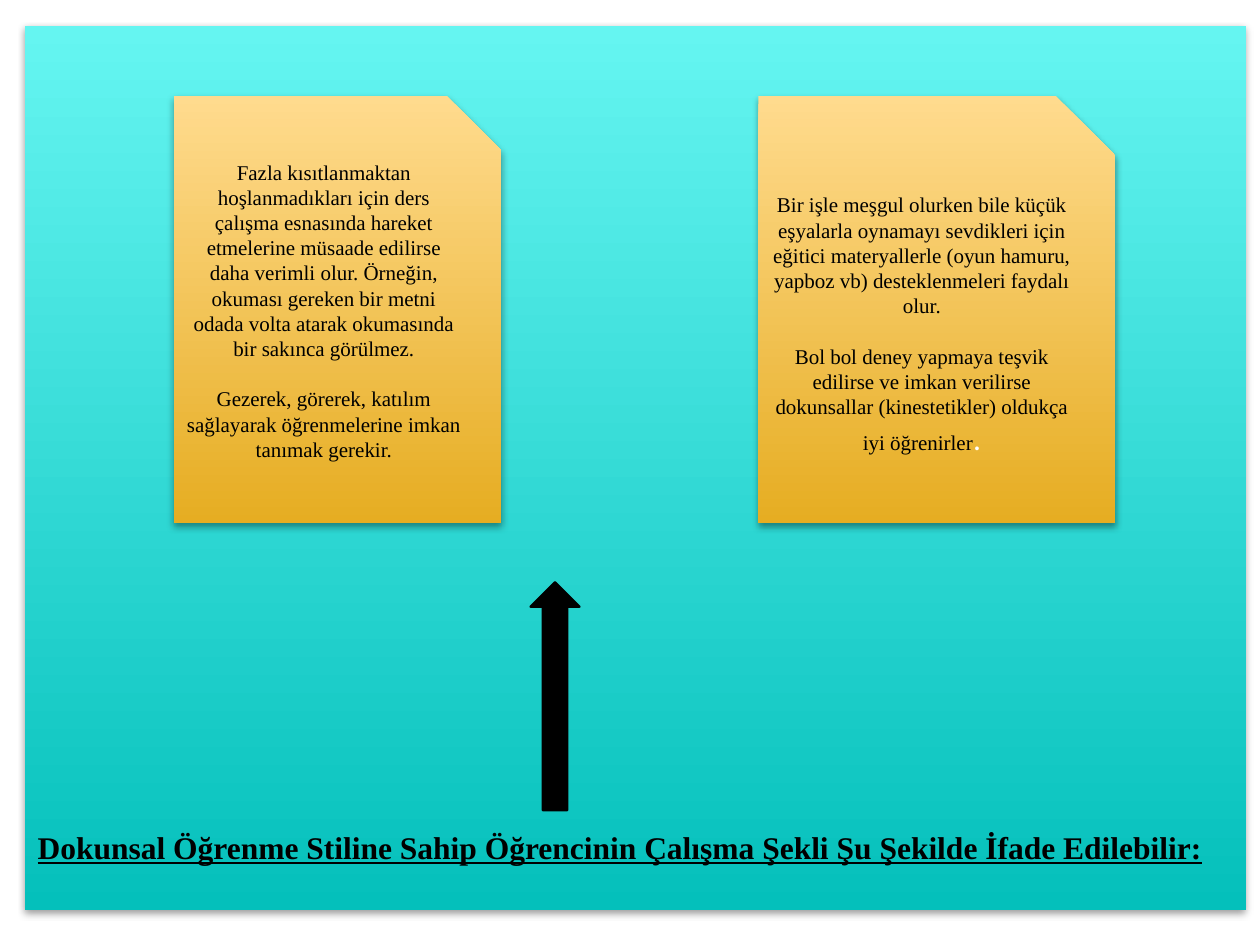
from lxml import etree
from pptx import Presentation
from pptx import util as u
from pptx.dml.color import RGBColor
from pptx.enum import shapes, text
from pptx.oxml.ns import qn

HUES = {"ink": "000000", "dot": "FFFFFF",
        "sea": ("65F5F1", "04C0BB"), "sand": ("FFDB8E", "E6AD22")}
SERIF, SANS = "Times New Roman", "Calibri"
WIDE, HIGH = 10, 7.5
TOP, TALL = 10.13, 45.2

TITLE = "Dokunsal Öğrenme Stiline Sahip Öğrencinin Çalışma Şekli Şu Şekilde İfade Edilebilir:"
CARDS = [
    {"left": 13.8, "wide": 26, "foot": 0.25, "dot": "", "lines": [
        "Fazla kısıtlanmaktan hoşlanmadıkları için ders çalışma esnasında hareket "
        "etmelerine müsaade edilirse daha verimli olur. Örneğin, okuması gereken bir "
        "metni odada volta atarak okumasında bir sakınca görülmez.",
        "Gezerek, görerek, katılım sağlayarak öğrenmelerine imkan tanımak gerekir."]},
    {"left": 60.2, "wide": 28.3, "foot": 0.05, "dot": ".", "lines": [
        "Bir işle meşgul olurken bile küçük eşyalarla oynamayı sevdikleri için eğitici "
        "materyallerle (oyun hamuru, yapboz vb) desteklenmeleri faydalı olur.",
        "Bol bol deney yapmaya teşvik edilirse ve imkan verilirse dokunsallar "
        "(kinestetikler) oldukça iyi öğrenirler"]},
]

deck = Presentation()
deck.slide_width, deck.slide_height = u.Inches(WIDE), u.Inches(HIGH)
slide = deck.slides.add_slide(deck.slide_layouts[6])


def place(kind, left, top, wide, tall):
    box = [u.Inches(share * side / 100) for share, side in
           zip((left, top, wide, tall), (WIDE, HIGH) * 2)]
    shape = slide.shapes.add_shape(kind, *box)
    shape.shadow.inherit = False
    return shape


def shade(shape, hues):
    shape.line.fill.background()
    shape.fill.gradient()
    shape.fill.gradient_angle = 270
    for stop, hue, spot in zip(shape.fill.gradient_stops, hues, (0, 1)):
        stop.color.rgb = RGBColor.from_string(hue)
        stop.position = spot
    glow = shape._element.spPr.find(qn("a:effectLst"))
    cast = etree.SubElement(glow, qn("a:outerShdw"), blurRad=str(u.Pt(4)),
                            dist=str(u.Pt(2)), dir="5400000", rotWithShape="0")
    tint = etree.SubElement(cast, qn("a:srgbClr"), val=HUES["ink"])
    etree.SubElement(tint, qn("a:alpha"), val="38000")


def frame(shape, anchor, foot):
    body = shape.text_frame
    body.word_wrap = True
    body.vertical_anchor = anchor
    body.margin_bottom = u.Inches(foot)
    return body


def write(para, words, size=12, face=SERIF, hue="ink", bold=False, line=False,
          align=text.PP_ALIGN.CENTER):
    para.alignment = align
    run = para.add_run()
    run.text = words
    font = run.font
    font.size, font.name, font.bold, font.underline = u.Pt(size), face, bold, line
    font.color.rgb = RGBColor.from_string(HUES[hue])


panel = place(shapes.MSO_SHAPE.RECTANGLE, 2, 2.8, 96.9, 93.47)
shade(panel, HUES["sea"])
body = frame(panel, text.MSO_ANCHOR.BOTTOM, 0.35)
write(body.paragraphs[0], TITLE, size=18, bold=True, line=True,
      align=text.PP_ALIGN.LEFT)

arrow = place(shapes.MSO_SHAPE.UP_ARROW, 42.1, 61.6, 3.9, 24.13)
arrow.fill.solid()
arrow.fill.fore_color.rgb = RGBColor.from_string(HUES["ink"])
arrow.line.color.rgb = RGBColor.from_string(HUES["ink"])
arrow.line.width = u.Pt(1.25)

for card in CARDS:
    note = place(shapes.MSO_SHAPE.SNIP_1_RECTANGLE, card["left"], TOP, card["wide"], TALL)
    shade(note, HUES["sand"])
    body = frame(note, text.MSO_ANCHOR.MIDDLE, card["foot"])
    for rank, words in enumerate(card["lines"]):
        para = body.add_paragraph() if rank else body.paragraphs[0]
        if rank:
            para.space_before = u.Pt(14.4)
        write(para, words)
    if card["dot"]:
        write(para, card["dot"], size=18, face=SANS, hue="dot")

deck.save("out.pptx")
